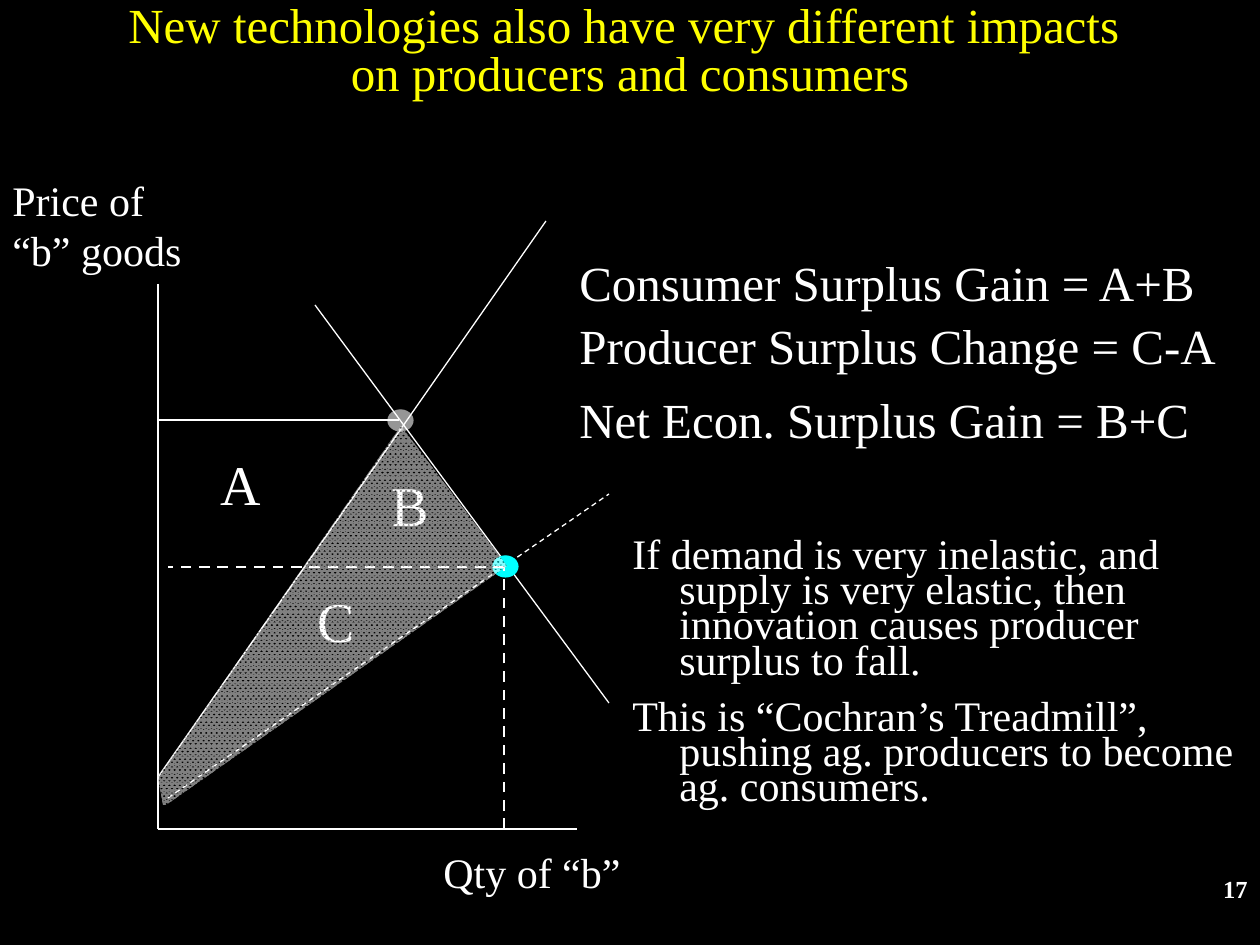
"""Build a slide on how new technology shifts producer and consumer surplus."""
import pptx
import pptx.dml.color
import pptx.enum.dml
import pptx.enum.shapes
import pptx.enum.text
import pptx.oxml
import pptx.oxml.ns
import pptx.util
from lxml import etree

EMU_PER_PX = 914400 / 126
FONT = "Times New Roman"
BLACK = pptx.dml.color.RGBColor(0x00, 0x00, 0x00)
WHITE = pptx.dml.color.RGBColor(0xFF, 0xFF, 0xFF)
YELLOW = pptx.dml.color.RGBColor(0xFF, 0xFF, 0x00)
GRAY = pptx.dml.color.RGBColor(0x96, 0x96, 0x96)
CYAN = pptx.dml.color.RGBColor(0x00, 0xFF, 0xFF)
ALIGN = pptx.enum.text.PP_ALIGN

CURVES = [
    ((158, 284), (158, 829), 0.75, False),
    ((158, 829), (577, 829), 0.75, False),
    ((158, 777), (546, 221), 0.75, False),
    ((315, 305), (609, 703), 0.75, False),
    ((399, 420), (158, 420), 1.5, False),
    ((168, 798), (609, 494), 0.75, True),
]
NEW_LEVELS = [
    ((504, 567), (168, 567), 1.5, True),
    ((504, 829), (504, 567), 1.5, True),
]
AREA_LABELS = [("A", 200, 462), ("B", 368, 483), ("C", 294, 599)]
RESULTS = [
    ("Consumer Surplus Gain = A+B", 262, 693),
    ("Producer Surplus Change = C-A", 325, 693),
    ("Net Econ. Surplus Gain = B+C", 399, 640),
]
CONCLUSIONS = [
    "If demand is very inelastic, and supply is very elastic, then innovation causes producer surplus to fall.",
    "This is “Cochran’s Treadmill”, pushing ag. producers to become ag. consumers.",
]
WEDGE = [(163, 805), (158, 777), (401, 426), (507, 566), (166, 805)]


def px(length):
    return pptx.util.Emu(round(length * EMU_PER_PX))


def box(left, top, width, height):
    return [px(length) for length in (left, top, width, height)]


def style(paragraph, size, color=WHITE, align=ALIGN.LEFT, bold=False):
    paragraph.alignment = align
    paragraph.font.name = FONT
    paragraph.font.size = pptx.util.Pt(size)
    paragraph.font.bold = bold
    paragraph.font.color.rgb = color


def set_hanging(paragraph):
    """Give a paragraph a hanging indent, tight lines and half a line before."""
    paragraph.line_spacing = 0.7
    paragraph.space_before = pptx.util.Pt(0)
    properties = paragraph._p.get_or_add_pPr()
    properties.set("marL", str(px(47)))
    properties.set("indent", str(px(-47)))
    before = properties.find(pptx.oxml.ns.qn("a:spcBef"))
    before.clear()
    etree.SubElement(before, pptx.oxml.ns.qn("a:spcPct"), val="50000")


def add_text(slide, bounds, texts, size, align=ALIGN.LEFT, hanging=False, bold=False, wrap=True):
    frame = slide.shapes.add_textbox(*box(*bounds)).text_frame
    frame.word_wrap = wrap
    frame.text = "\n".join(texts)
    for paragraph in frame.paragraphs:
        style(paragraph, size, align=align, bold=bold)
        if hanging:
            set_hanging(paragraph)


def add_title(slide, text):
    title = slide.shapes.title
    title.left, title.top, title.width, title.height = box(0, 0, 1260, 107)
    frame = title.text_frame
    frame.text = text
    frame.word_wrap = True
    frame.auto_size = pptx.enum.text.MSO_AUTO_SIZE.NONE
    frame.vertical_anchor = pptx.enum.text.MSO_ANCHOR.TOP
    style(frame.paragraphs[0], 28, YELLOW, ALIGN.CENTER)
    frame.paragraphs[0].line_spacing = 0.8


def add_line(slide, start, end, width, dashed):
    line = slide.shapes.add_connector(
        pptx.enum.shapes.MSO_CONNECTOR.STRAIGHT, *box(*start, *end))
    line.line.color.rgb = WHITE
    line.line.width = pptx.util.Pt(width)
    if dashed:
        line.line.dash_style = pptx.enum.dml.MSO_LINE.DASH
    etree.SubElement(line._element.spPr, pptx.oxml.ns.qn("a:effectLst"))


def add_point(slide, left, top, color):
    point = slide.shapes.add_shape(
        pptx.enum.shapes.MSO_SHAPE.OVAL, *box(left, top, 25, 21))
    point.shadow.inherit = False
    point.fill.solid()
    point.fill.fore_color.rgb = color
    point.line.color.rgb = color
    point.line.width = pptx.util.Pt(0.75)


def add_wedge(slide, points):
    """Add the half-transparent patterned area between the supply lines."""
    builder = slide.shapes.build_freeform(*points[0], scale=EMU_PER_PX)
    builder.add_line_segments(points[1:], close=True)
    wedge = builder.convert_to_shape()
    wedge.shadow.inherit = False
    wedge.line.fill.background()
    wedge.fill.patterned()
    wedge.fill.pattern = pptx.enum.dml.MSO_PATTERN.PERCENT_80
    wedge.fill.fore_color.rgb = WHITE
    wedge.fill.back_color.rgb = BLACK
    pattern = wedge._element.spPr.find(pptx.oxml.ns.qn("a:pattFill"))
    for color in pattern.iter(pptx.oxml.ns.qn("a:srgbClr")):
        etree.SubElement(color, pptx.oxml.ns.qn("a:alpha"), val="50000")


def main():
    presentation = pptx.Presentation()
    presentation.slide_width = px(1260)
    presentation.slide_height = px(945)
    slide = presentation.slides.add_slide(presentation.slide_layouts[5])
    slide.background.fill.solid()
    slide.background.fill.fore_color.rgb = BLACK

    add_title(slide, "New technologies also have very different impacts \von producers and consumers")
    add_text(slide, (1102, 868, 158, 42), ["17"], 14, ALIGN.RIGHT, bold=True)
    add_text(slide, (0, 168, 199, 113), ["Price of “b” goods"], 24)
    add_text(slide, (431, 840, 203, 63), ["Qty of “b”"], 24, wrap=False)

    add_point(slide, 388, 410, GRAY)
    for line in CURVES:
        add_line(slide, *line)
    add_point(slide, 493, 556, CYAN)
    for line in NEW_LEVELS:
        add_line(slide, *line)

    for text, left, top in AREA_LABELS:
        add_text(slide, (left, top, 73, 59), [text], 32, ALIGN.RIGHT, hanging=True)
    for text, top, width in RESULTS:
        add_text(slide, (567, top, width, 54), [text], 28, hanging=True)
    add_text(slide, (620, 535, 640, 287), CONCLUSIONS, 24, hanging=True)
    add_wedge(slide, WEDGE)

    presentation.save("out.pptx")


if __name__ == "__main__":
    main()
